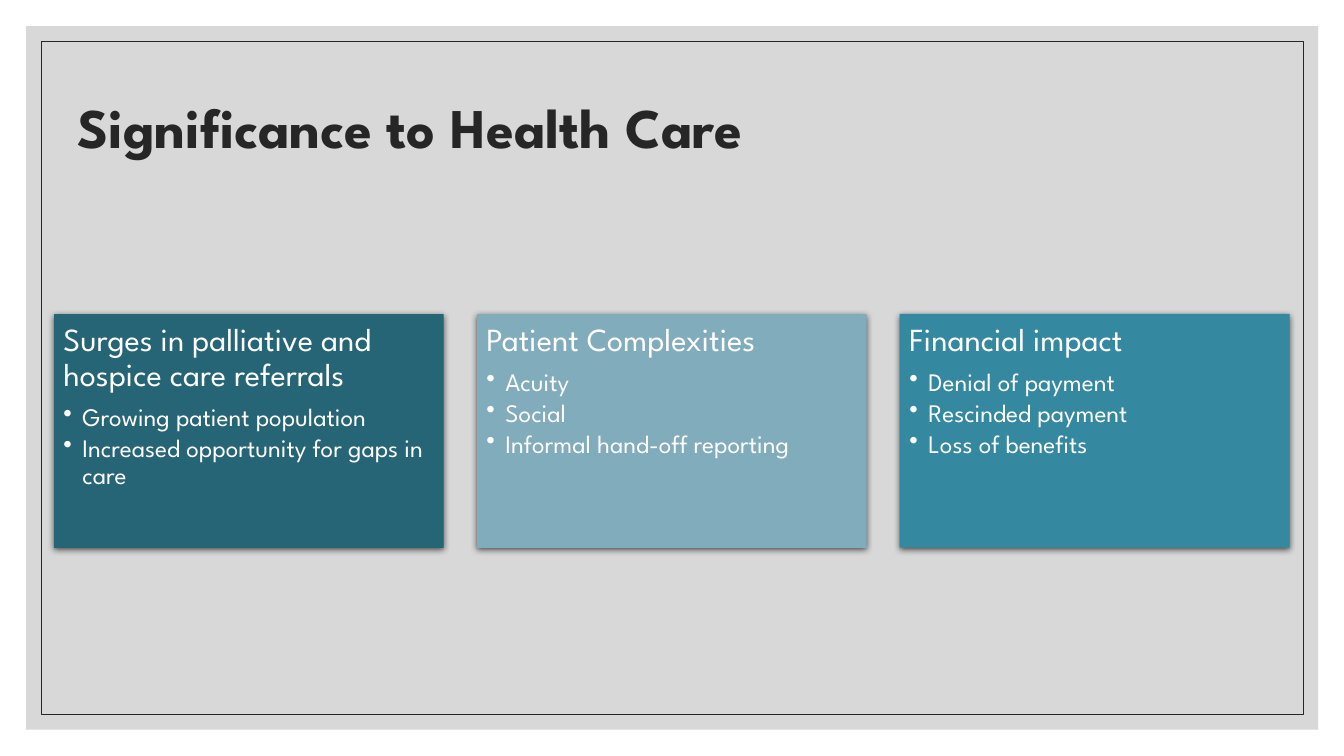
import pptx
import pptx.dml.color
import pptx.enum.shapes
import pptx.enum.text
import pptx.oxml
import pptx.oxml.ns
import pptx.util
from pptx.util import Cm

RECTANGLE = pptx.enum.shapes.MSO_SHAPE.RECTANGLE
ANCHOR = pptx.enum.text.MSO_ANCHOR
NAMESPACE = pptx.oxml.ns.nsdecls("a")


def color(hex_value):
    return pptx.dml.color.RGBColor.from_string(hex_value)


def format_paragraph(paragraph, paragraph_values, font_values, font_color):
    for name, value in paragraph_values.items():
        setattr(paragraph, name, value)
    for name, value in font_values.items():
        setattr(paragraph.font, name, value)
    paragraph.font.color.rgb = color(font_color)


presentation = pptx.Presentation()
presentation.slide_width = Cm(33.87)
presentation.slide_height = Cm(19.05)
slide = presentation.slides.add_slide(presentation.slide_layouts[5])
title = slide.shapes.title

# Grey panel and thin frame behind the title
panel = slide.shapes.add_shape(RECTANGLE, Cm(0.66), Cm(0.66), Cm(32.56), Cm(17.73))
panel.fill.solid()
panel.fill.fore_color.rgb = color("BFBFBF")
panel.line.fill.background()
panel_color = panel.element.spPr.find(".//" + pptx.oxml.ns.qn("a:srgbClr"))
panel_color.append(pptx.oxml.parse_xml(f'<a:alpha {NAMESPACE} val="60000"/>'))

frame = slide.shapes.add_shape(RECTANGLE, Cm(1.04), Cm(1.04), Cm(31.8), Cm(16.97))
frame.fill.background()
frame.line.color.rgb = color("262626")
frame.line.width = pptx.util.Pt(0.5)

for backdrop in (panel, frame):
    backdrop.shadow.inherit = False
    title.element.addprevious(backdrop.element)

# Title
title_position = {"left": Cm(1.7), "top": Cm(1.78), "width": Cm(29.18), "height": Cm(3.02)}
for name, value in title_position.items():
    setattr(title, name, value)
title.text_frame.text = "Significance to Health Care"
title.text_frame.auto_size = pptx.enum.text.MSO_AUTO_SIZE.NONE
title.text_frame.vertical_anchor = ANCHOR.MIDDLE
LEFT = pptx.enum.text.PP_ALIGN.LEFT
format_paragraph(
    title.text_frame.paragraphs[0],
    {"alignment": LEFT, "line_spacing": 0.9},
    {"name": "League Spartan", "size": pptx.util.Pt(40), "bold": True},
    "262626",
)

# Three cards: heading, gradient colors, bullets
cards = [
    ("Surges in palliative and hospice care referrals", ("266576", "246577"),
     ["Growing patient population", "Increased opportunity for gaps in care"]),
    ("Patient Complexities", ("81ACBC", "7EABBC"),
     ["Acuity", "Social", "Informal hand-off reporting"]),
    ("Financial impact", ("3488A0", "3488A0"),
     ["Denial of payment", "Rescinded payment", "Loss of benefits"]),
]
heading_spacing = {"alignment": LEFT, "line_spacing": 0.9, "space_after": pptx.util.Pt(8)}
bullet_spacing = {"alignment": LEFT, "line_spacing": 0.9, "space_after": pptx.util.Pt(2.7), "level": 1}
heading_font = {"name": "League Spartan", "size": pptx.util.Pt(23)}
bullet_font = {"name": "League Spartan", "size": pptx.util.Pt(18)}
card_text_format = {
    "word_wrap": True,
    "vertical_anchor": ANCHOR.TOP,
    "margin_left": Cm(0.25),
    "margin_right": Cm(0.25),
    "margin_top": Cm(0.25),
    "margin_bottom": Cm(0.25),
}

for index, (heading, gradient_colors, bullets) in enumerate(cards):
    card = slide.shapes.add_shape(
        RECTANGLE, Cm(1.35 + 10.66 * index), Cm(7.91), Cm(9.83), Cm(5.89))
    card.line.fill.background()
    if gradient_colors[0] == gradient_colors[1]:
        card.fill.solid()
        card.fill.fore_color.rgb = color(gradient_colors[0])
    else:
        card.fill.gradient()
        card.fill.gradient_angle = 270
        for stop, stop_color in zip(card.fill.gradient_stops, gradient_colors):
            stop.color.rgb = color(stop_color)

    card.shadow.inherit = False
    effects = card.element.spPr.find(pptx.oxml.ns.qn("a:effectLst"))
    effects.append(pptx.oxml.parse_xml(
        f'<a:outerShdw {NAMESPACE} blurRad="57150" dist="19050" dir="5400000" algn="ctr" rotWithShape="0">'
        '<a:srgbClr val="000000"><a:alpha val="63000"/></a:srgbClr></a:outerShdw>'))

    text_frame = card.text_frame
    for name, value in card_text_format.items():
        setattr(text_frame, name, value)
    text_frame.text = heading
    format_paragraph(text_frame.paragraphs[0], heading_spacing, heading_font, "FFFFFF")
    for bullet in bullets:
        paragraph = text_frame.add_paragraph()
        paragraph.text = bullet
        format_paragraph(paragraph, bullet_spacing, bullet_font, "FFFFFF")
        properties = paragraph._p.get_or_add_pPr()
        properties.set("marL", str(Cm(0.48)))
        properties.set("indent", str(-Cm(0.48)))
        properties.append(pptx.oxml.parse_xml(f'<a:buChar {NAMESPACE} char="•"/>'))

presentation.save("out.pptx")
